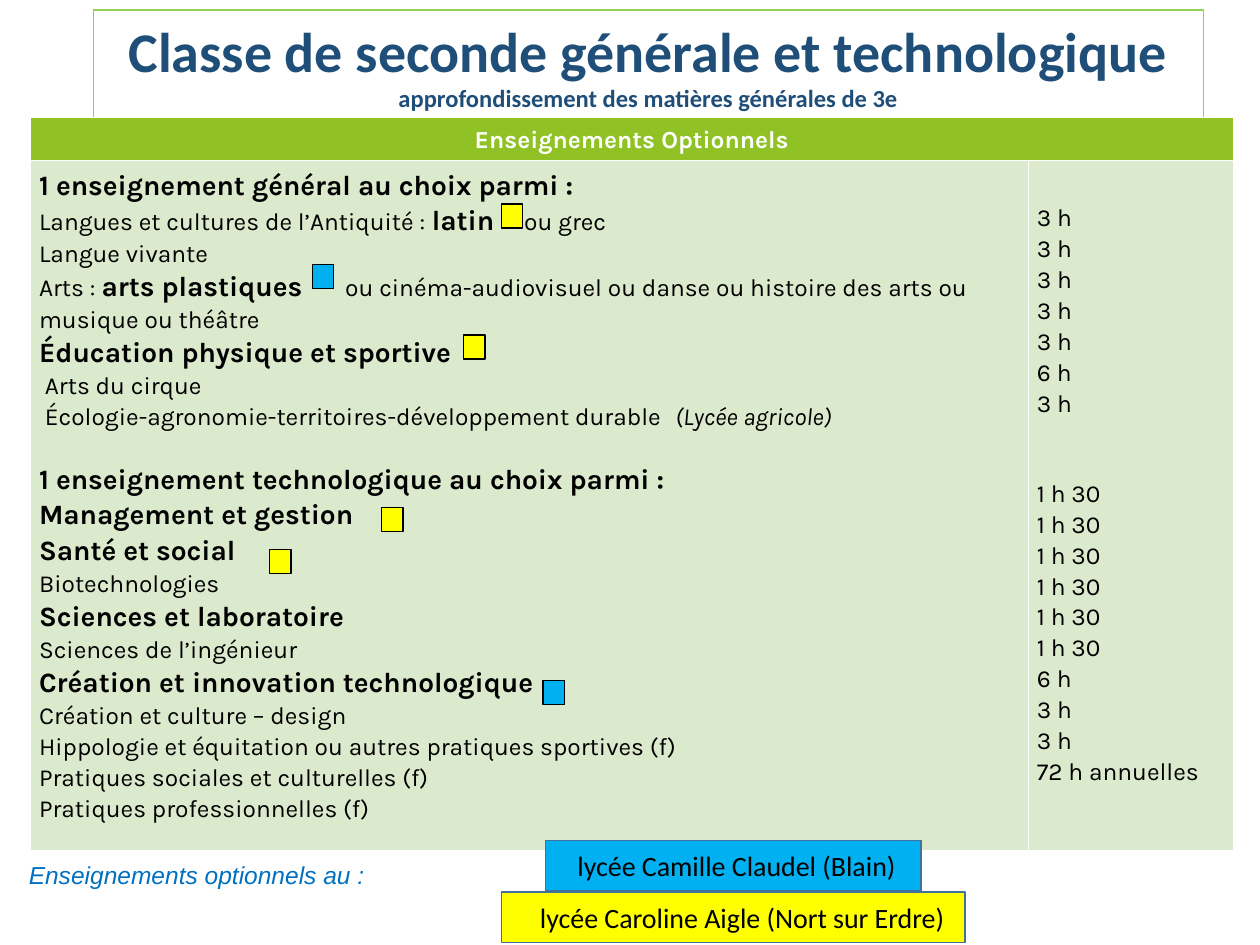
from lxml import etree
from pptx import Presentation
from pptx.dml.color import RGBColor
from pptx.enum import shapes, text
from pptx.oxml import ns
from pptx.util import Inches, Pt

WHITE = RGBColor(0xFF, 0xFF, 0xFF)
BLACK = RGBColor(0, 0, 0)
NAVY = RGBColor(0x1F, 0x4E, 0x79)
BLUE = RGBColor(0x00, 0x70, 0xC0)
EDGE = RGBColor(0x41, 0x71, 0x9C)
LIME = RGBColor(0x92, 0xD0, 0x50)
GREEN = RGBColor(0x90, 0xC2, 0x26)
PALE = RGBColor(0xDB, 0xE9, 0xCD)
SKY = RGBColor(0x00, 0xB0, 0xF0)
YELLOW = RGBColor(0xFF, 0xFF, 0x00)

PLAIN, BOLD, ITALIC = "plain", "bold", "italic"
GENERAL = [
    [("1 enseignement général au choix parmi :", BOLD)],
    [("Langues et cultures de l’Antiquité : ", PLAIN), ("latin", BOLD), ("\tou grec", PLAIN)],
    [("Langue vivante", PLAIN)],
    [("Arts : ", PLAIN), ("arts plastiques", BOLD),
     ("\tou cinéma-audiovisuel ou danse ou histoire des arts ou musique ou théâtre", PLAIN)],
    [("Éducation physique et sportive", BOLD)],
    [(" Arts du cirque", PLAIN)],
    [(" Écologie-agronomie-territoires-développement durable", PLAIN),
     ("\t(Lycée agricole)", ITALIC)],
]
TECHNOLOGICAL = [
    [("1 enseignement technologique au choix parmi :", BOLD)],
    [("Management et gestion", BOLD)],
    [("Santé et social", BOLD)],
    [("Biotechnologies", PLAIN)],
    [("Sciences et laboratoire", BOLD)],
    [("Sciences de l’ingénieur", PLAIN)],
    [("Création et innovation technologique", BOLD)],
    [("Création et culture – design", PLAIN)],
    [("Hippologie et équitation ou autres pratiques sportives (f)", PLAIN)],
    [("Pratiques sociales et culturelles (f)", PLAIN)],
    [("Pratiques professionnelles (f)", PLAIN)],
]
TABS = {1: 3.85, 3: 2.43, 6: 5.05}
GENERAL_HOURS = ["3 h"] * 5 + ["6 h", "3 h"]
TECHNOLOGICAL_HOURS = ["1 h 30"] * 6 + ["6 h", "3 h", "3 h", "72 h annuelles"]
MARKERS = [(3.98, 1.62, YELLOW), (2.48, 2.1, SKY), (3.68, 2.66, YELLOW),
           (3.03, 4.03, YELLOW), (2.14, 4.36, YELLOW), (4.31, 5.4, SKY)]


def set_font(font, name, size, color, bold=False, italic=False):
    """Set the main properties of a font."""
    font.name, font.size, font.bold, font.italic = name, Pt(size), bold, italic
    font.color.rgb = color


def add_rect(slide, box, fill, line, width):
    """Add a flat rectangle, unfilled when fill is None."""
    sp = slide.shapes.add_shape(shapes.MSO_SHAPE.RECTANGLE, *map(Inches, box))
    sp.shadow.inherit = False
    if fill is None:
        sp.fill.background()
    else:
        sp.fill.solid()
        sp.fill.fore_color.rgb = fill
    sp.line.color.rgb = line
    sp.line.width = Pt(width)
    return sp


def add_title(slide, box):
    """Add the framed title and its subtitle."""
    tf = add_rect(slide, box, None, LIME, 0.75).text_frame
    tf.vertical_anchor = text.MSO_ANCHOR.TOP
    lines = [("Classe de seconde générale et technologique", 32),
             ("approfondissement des matières générales de 3e", 14)]
    for i, (line, size) in enumerate(lines):
        p = tf.add_paragraph() if i else tf.paragraphs[0]
        p.text = line
        p.alignment = text.PP_ALIGN.CENTER
        set_font(p.font, "Calibri", size, NAVY, bold=True)


def add_tab(p, position):
    """Give a paragraph one left tab stop."""
    tabs = etree.Element(ns.qn("a:tabLst"))
    etree.SubElement(tabs, ns.qn("a:tab"), pos=str(Inches(position)), algn="l")
    p_pr = p._p.get_or_add_pPr()
    default = p_pr.find(ns.qn("a:defRPr"))
    if default is None:
        p_pr.append(tabs)
    else:
        default.addprevious(tabs)


def style_cell(cell, fill, borders):
    """Set the borders, fill and side margins of a cell."""
    tc_pr = cell._tc.get_or_add_tcPr()
    for side, (color, width) in borders.items():
        ln = etree.SubElement(tc_pr, ns.qn(f"a:ln{side}"), w=str(Pt(width)))
        solid = etree.SubElement(ln, ns.qn("a:solidFill"))
        etree.SubElement(solid, ns.qn("a:srgbClr"), val=str(color))
    cell.fill.solid()
    cell.fill.fore_color.rgb = fill
    cell.margin_left = cell.margin_right = Inches(0.07)


def fill_cell(cell, groups, gap, tabs):
    """Write groups of lines in a cell, with a gap between the groups."""
    tf = cell.text_frame
    lines = [(line, g and not i) for g, group in enumerate(groups)
             for i, line in enumerate(group)]
    for n, (line, starts_group) in enumerate(lines):
        p = tf.add_paragraph() if n else tf.paragraphs[0]
        p.line_spacing = 1.08
        if starts_group:
            p.space_before = Pt(gap)
        if n in tabs:
            add_tab(p, tabs[n])
        for words, kind in line:
            r = p.add_run()
            r.text = words
            set_font(r.font, "Karla", 16 if kind == BOLD else 14, BLACK,
                     kind == BOLD, kind == ITALIC)


def add_options_table(slide, box):
    """Add the table of optional courses and weekly hours."""
    table = slide.shapes.add_table(2, 2, *map(Inches, box)).table
    table.horz_banding = False
    header_height, hours_width = 0.33, 1.63
    table.columns[0].width = Inches(box[2] - hours_width)
    table.columns[1].width = Inches(hours_width)
    table.rows[0].height = Inches(header_height)
    table.rows[1].height = Inches(box[3] - header_height)
    head, head_end = table.cell(0, 0), table.cell(0, 1)
    courses, hours = table.cell(1, 0), table.cell(1, 1)

    thin, thick, dark = (WHITE, 0.11), (WHITE, 0.34), (BLACK, 1)
    style_cell(head, GREEN, {"L": thin, "T": thin, "B": thick})
    style_cell(head_end, GREEN, {"R": dark, "B": dark})
    style_cell(courses, PALE, {"L": thin, "R": thin, "T": thick, "B": thin})
    style_cell(hours, PALE, {"L": thin, "R": thin, "B": thin})
    head.merge(head_end)

    p = head.text_frame.paragraphs[0]
    p.text = "Enseignements Optionnels"
    p.alignment = text.PP_ALIGN.CENTER
    p.line_spacing = 1.08
    set_font(p.font, "Karla", 14, WHITE, bold=True)
    fill_cell(courses, [GENERAL, TECHNOLOGICAL], 17, TABS)
    hours.margin_top = Inches(0.33)
    hour_groups = [[[(h, PLAIN)] for h in group]
                   for group in (GENERAL_HOURS, TECHNOLOGICAL_HOURS)]
    fill_cell(hours, hour_groups, 34, {})


def add_school(slide, box, name, fill, left_margin):
    """Add the coloured label of one school."""
    tf = add_rect(slide, box, fill, EDGE, 1).text_frame
    tf.vertical_anchor = text.MSO_ANCHOR.MIDDLE
    tf.margin_left = Inches(left_margin)
    p = tf.paragraphs[0]
    p.text = name
    p.alignment = text.PP_ALIGN.CENTER
    set_font(p.font, "Calibri", 16, BLACK)


def add_legend_caption(slide, box):
    """Add the caption that introduces the schools."""
    tf = slide.shapes.add_textbox(*map(Inches, box)).text_frame
    tf.word_wrap = True
    p = tf.paragraphs[0]
    p.text = "Enseignements optionnels au :"
    set_font(p.font, "Arial", 14, BLUE, italic=True)


def main():
    """Build the slide and save it."""
    prs = Presentation()
    prs.slide_width, prs.slide_height = Inches(10), Inches(7.5)
    slide = prs.slides.add_slide(prs.slide_layouts[6])
    add_title(slide, (0.74, 0.08, 8.81, 0.87))
    add_options_table(slide, (0.24, 0.93, 9.55, 5.8))
    add_school(slide, (4.33, 6.67, 2.98, 0.4), "lycée Camille Claudel (Blain)", SKY, 0.15)
    add_school(slide, (3.98, 7.08, 3.68, 0.4), "lycée Caroline Aigle (Nort sur Erdre)",
               YELLOW, 0.24)
    add_legend_caption(slide, (0.13, 6.78, 2.98, 0.34))
    for left, top, color in MARKERS:
        add_rect(slide, (left, top, 0.17, 0.19), color, BLACK, 0.75)
    prs.save("out.pptx")


if __name__ == "__main__":
    main()
